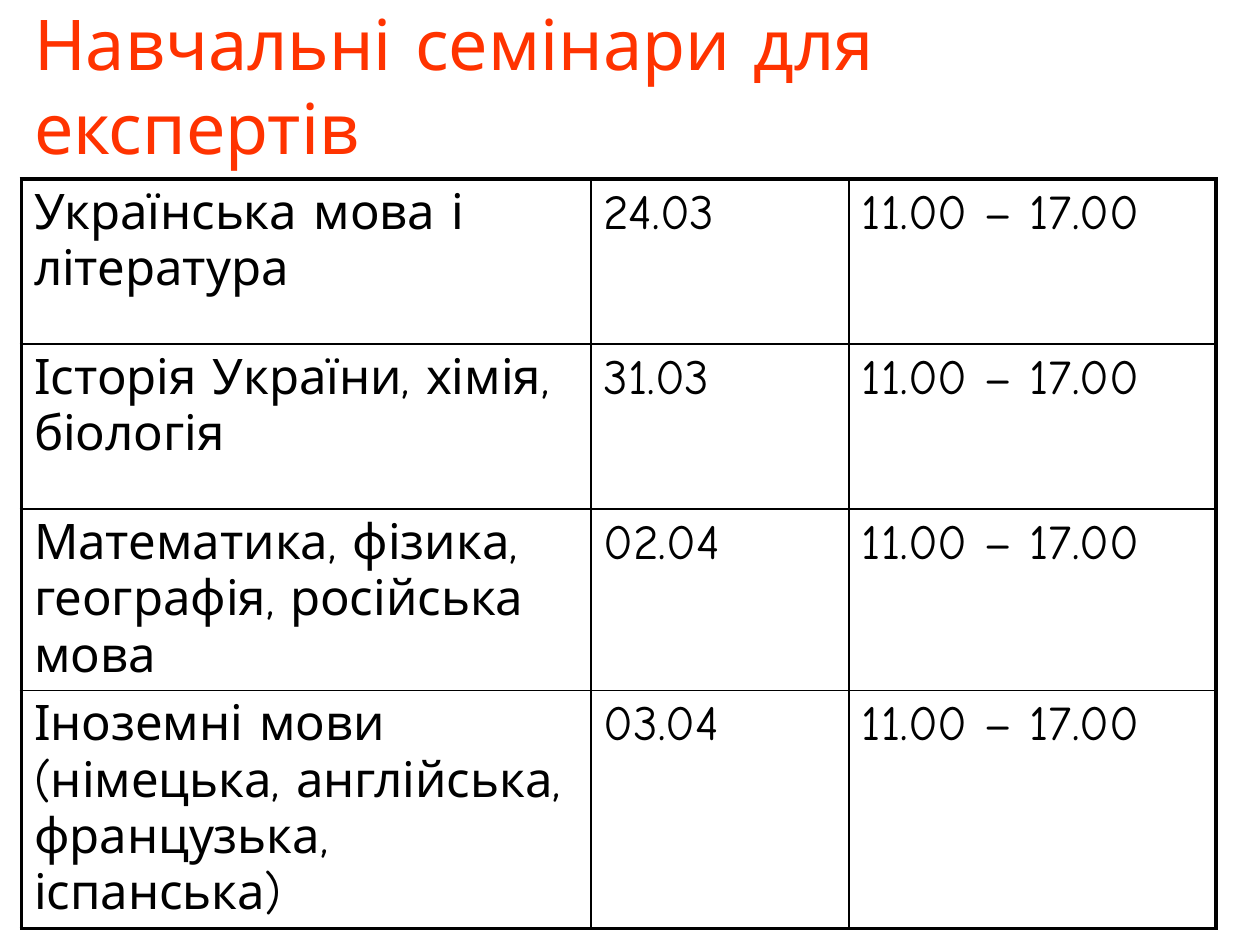
import pptx
import pptx.util
import pptx.dml.color
import pptx.enum.text
import pptx.oxml
import pptx.oxml.ns
from dataclasses import dataclass
from pptx.util import Inches


@dataclass(frozen=True)
class Theme:
    font: str = "Comic Neue"
    title_color: str = "FF3300"
    text_color: str = "000000"
    line_color: str = "000000"
    title_size: float = 40
    cell_size: float = 28
    outer_line: float = 2.25
    inner_line: float = 1


THEME = Theme()
HOURS = "11.00 – 17.00"
SEMINARS = [
    ("Українська мова і література", "24.03"),
    ("Історія України, хімія, біологія", "31.03"),
    ("Математика, фізика, географія, російська мова", "02.04"),
    ("Іноземні мови (німецька, англійська, французька, іспанська)", "03.04"),
]
COL_WIDTHS = [4.52, 2.05, 2.91]
ROW_HEIGHT = 1.31


def format_text(tf, size, color):
    for p in tf.paragraphs:
        p.alignment = pptx.enum.text.PP_ALIGN.LEFT
        for r in p.runs:
            r.font.name = THEME.font
            r.font.size = pptx.util.Pt(size)
            r.font.color.rgb = pptx.dml.color.RGBColor.from_string(color)


def set_borders(cell, widths):
    """Draw the cell borders; widths are points for left, right, top, bottom."""
    tc_pr = cell._tc.get_or_add_tcPr()
    for i, (side, width) in enumerate(zip("LRTB", widths)):
        ln = pptx.oxml.parse_xml(
            f'<a:ln{side} {pptx.oxml.ns.nsdecls("a")} w="{pptx.util.Pt(width)}">'
            f'<a:solidFill><a:srgbClr val="{THEME.line_color}"/></a:solidFill>'
            f'</a:ln{side}>')
        tc_pr.insert(i, ln)


def add_title(s, text):
    title = s.shapes.title
    title.left, title.top = Inches(0.17), Inches(0.17)
    title.width, title.height = Inches(8.67), Inches(1)
    tf = title.text_frame
    tf.text = text
    tf.word_wrap = True
    tf.auto_size = pptx.enum.text.MSO_AUTO_SIZE.NONE
    tf.vertical_anchor = pptx.enum.text.MSO_ANCHOR.MIDDLE
    format_text(tf, THEME.title_size, THEME.title_color)


def add_schedule(s, rows):
    n_rows, n_cols = len(rows), len(COL_WIDTHS)
    table = s.shapes.add_table(
        n_rows, n_cols, Inches(0.17), Inches(1.42),
        Inches(sum(COL_WIDTHS)), Inches(ROW_HEIGHT * n_rows)).table
    table.first_row = table.horz_banding = False
    for col, width in zip(table.columns, COL_WIDTHS):
        col.width = Inches(width)
    for i, row in enumerate(rows):
        table.rows[i].height = Inches(ROW_HEIGHT)
        for j, text in enumerate(row):
            cell = table.cell(i, j)
            cell.text_frame.text = text
            format_text(cell.text_frame, THEME.cell_size, THEME.text_color)
            cell.fill.background()
            # Thick lines only on the outer edge
            on_edge = (j == 0, j == n_cols - 1, i == 0, i == n_rows - 1)
            set_borders(cell, [THEME.outer_line if edge else THEME.inner_line
                               for edge in on_edge])


def main():
    prs = pptx.Presentation()
    prs.slide_width, prs.slide_height = Inches(10), Inches(7.5)
    s = prs.slides.add_slide(prs.slide_layouts[5])

    # Heading
    add_title(s, "Навчальні семінари для експертів")

    # Subject, date and hours of each seminar
    add_schedule(s, [(subject, date, HOURS) for subject, date in SEMINARS])

    prs.save("out.pptx")


if __name__ == "__main__":
    main()
